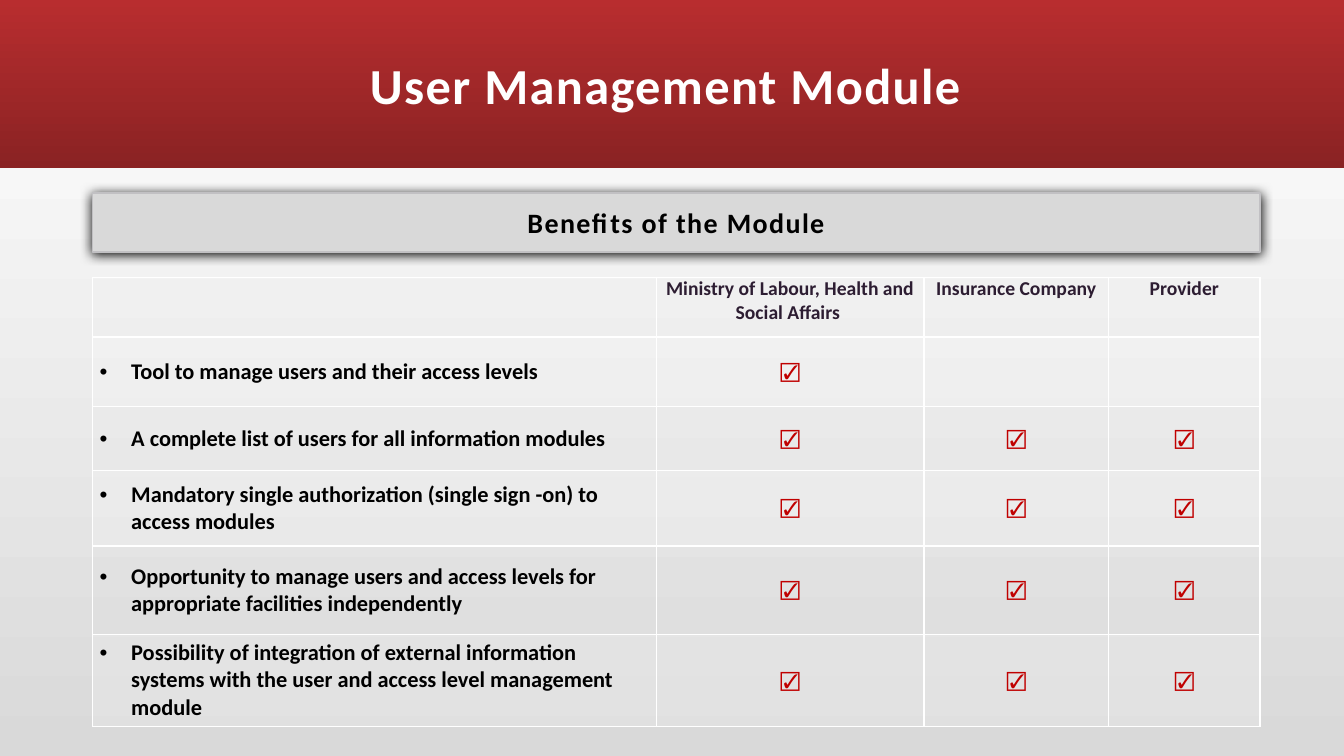
from dataclasses import dataclass

from lxml.etree import SubElement
from pptx import Presentation
from pptx.dml.color import RGBColor
from pptx.dml.fill import FillFormat
from pptx.enum.shapes import MSO_SHAPE
from pptx.enum.text import MSO_ANCHOR, PP_ALIGN
from pptx.oxml import parse_xml
from pptx.oxml.ns import nsdecls, qn
from pptx.shapes.autoshape import Shape
from pptx.slide import Slide
from pptx.table import Table, _Cell as Cell
from pptx.text.text import TextFrame, _Paragraph as Paragraph
from pptx.util import Emu, Pt

PX = 9525
WHITE = RGBColor(0xFF, 0xFF, 0xFF)
BLACK = RGBColor(0x00, 0x00, 0x00)
GREY = RGBColor(0xD9, 0xD9, 0xD9)
OUTLINE = RGBColor(0xC1, 0xC0, 0xC3)
RED = RGBColor(0xB8, 0x2D, 0x2F)
DARK_RED = RGBColor(0x8A, 0x22, 0x23)
PLUM = RGBColor(0x2D, 0x1D, 0x32)
TICK_RED = RGBColor(0xC0, 0x00, 0x00)

LEFT, WIDTH = 88, 1112
COLUMN_WIDTHS = [537, 255, 176, 144]
HEADER_HEIGHT = 57
SIDE_INSET, BULLET_INDENT = 7, 30


@dataclass(frozen=True)
class TextStyle:
    size: int
    color: RGBColor
    font: str = "Calibri"
    bold: bool = True
    align: PP_ALIGN = PP_ALIGN.CENTER
    spacing: int = 0


@dataclass(frozen=True)
class Benefit:
    text: str
    height: int
    ticks: int = 3


TITLE = TextStyle(36, WHITE, spacing=100)
SUBTITLE = TextStyle(20, BLACK, spacing=100)
HEADER = TextStyle(14, PLUM)
BENEFIT = TextStyle(16, BLACK, align=PP_ALIGN.LEFT)
TICK = TextStyle(14, TICK_RED, font="Arial", bold=False, spacing=100)

USERS = ["Ministry of Labour, Health and Social Affairs ", "Insurance Company", "Provider"]
BENEFITS = [
    Benefit("Tool to manage users and their access levels", 66, ticks=1),
    Benefit("A complete list of users for all information modules", 61),
    Benefit("Mandatory single authorization (single sign -on) to access modules", 72),
    Benefit("Opportunity to manage users and access levels for "
            "appropriate facilities independently", 84),
    Benefit("Possibility of integration of external information systems "
            "with the user and access level management module", 88),
]


def px(length: int) -> Emu:
    return Emu(length * PX)


def write(frame: TextFrame, text: str, style: TextStyle) -> Paragraph:
    paragraph = frame.paragraphs[0]
    run = paragraph.add_run()
    run.text = text
    paragraph.alignment = style.align
    font = paragraph.font
    font.name, font.size, font.bold = style.font, Pt(style.size), style.bold
    font.color.rgb = style.color
    if style.spacing:
        run.font._element.set("spc", str(style.spacing))
    return paragraph


def fill_gradient(fill: FillFormat, angle: int, start: RGBColor, end: RGBColor) -> None:
    fill.gradient()
    fill.gradient_angle = angle
    for stop, color in zip(fill.gradient_stops, (start, end)):
        stop.color.rgb = color


def add_rectangle(slide: Slide, left: int, top: int, width: int, height: int) -> Shape:
    shape = slide.shapes.add_shape(
        MSO_SHAPE.RECTANGLE, px(left), px(top), px(width), px(height))
    shape.shadow.inherit = False
    return shape


def add_title(slide: Slide) -> None:
    title = slide.shapes.title
    title.left, title.top, title.width, title.height = px(112), px(0), px(1056), px(160)
    title.text_frame.vertical_anchor = MSO_ANCHOR.MIDDLE
    write(title.text_frame, "User Management Module ", TITLE)
    band = add_rectangle(slide, 0, 0, 1280, 160)
    fill_gradient(band.fill, 270, RED, DARK_RED)
    band.line.fill.background()
    title.element.addprevious(band.element)


def add_subtitle(slide: Slide) -> None:
    bar = add_rectangle(slide, LEFT, 184, WIDTH, 56)
    bar.fill.solid()
    bar.fill.fore_color.rgb = GREY
    bar.line.color.rgb = OUTLINE
    bar.line.width = Pt(1)
    bar.text_frame.vertical_anchor = MSO_ANCHOR.MIDDLE
    write(bar.text_frame, "Benefits of the Module", SUBTITLE)
    effects = bar.element.spPr.find(qn("a:effectLst"))
    shadow = SubElement(effects, qn("a:outerShdw"), blurRad=str(Pt(8.5)),
                        dist=str(Pt(1)), dir="5400000", algn="ctr", rotWithShape="0")
    SubElement(shadow, qn("a:srgbClr"), val=str(BLACK))


def format_cell(cell: Cell, row: int) -> None:
    cell.margin_left = cell.margin_right = px(SIDE_INSET)
    cell.margin_top = cell.margin_bottom = 0
    cell.vertical_anchor = MSO_ANCHOR.MIDDLE if row else MSO_ANCHOR.TOP
    properties = cell._tc.get_or_add_tcPr()
    if row % 2:
        cell.fill.solid()
        cell.fill.fore_color.rgb = WHITE
        color = properties.find(qn("a:solidFill")).find(qn("a:srgbClr"))
        SubElement(color, qn("a:alpha"), val="20000")
    else:
        cell.fill.background()
    widths = {"lnL": 1, "lnR": 1, "lnT": 2 if row == 1 else 1, "lnB": 1 if row else 2}
    for index, (side, width) in enumerate(widths.items()):
        properties.insert(index, parse_xml(
            f'<a:{side} {nsdecls("a")} w="{Pt(width)}"><a:solidFill>'
            f'<a:srgbClr val="{WHITE}"/></a:solidFill></a:{side}>'))


def write_benefit(cell: Cell, text: str) -> None:
    paragraph = write(cell.text_frame, text, BENEFIT)
    paragraph.space_before = Pt(12)
    properties = paragraph._p.get_or_add_pPr()
    properties.set("marL", str(px(BULLET_INDENT)))
    properties.set("indent", str(px(-BULLET_INDENT)))
    bullet_font = parse_xml(f'<a:buFont {nsdecls("a")} typeface="Arial"/>')
    bullet = parse_xml(f'<a:buChar {nsdecls("a")} char="•"/>')
    properties.find(qn("a:spcBef")).addnext(bullet_font)
    bullet_font.addnext(bullet)


def fill_table(table: Table) -> None:
    for column, user in enumerate(USERS, start=1):
        write(table.cell(0, column).text_frame, user, HEADER)
    for row, benefit in enumerate(BENEFITS, start=1):
        write_benefit(table.cell(row, 0), benefit.text)
        for column in range(1, benefit.ticks + 1):
            write(table.cell(row, column).text_frame, "☑", TICK)


def add_benefits_table(slide: Slide) -> None:
    heights = [HEADER_HEIGHT] + [benefit.height for benefit in BENEFITS]
    table = slide.shapes.add_table(
        len(heights), len(COLUMN_WIDTHS),
        px(LEFT), px(264), px(WIDTH), px(sum(heights))).table
    table.first_row = table.horz_banding = False
    for column, width in zip(table.columns, COLUMN_WIDTHS):
        column.width = px(width)
    for index, (row, height) in enumerate(zip(table.rows, heights)):
        row.height = px(height)
        for cell in row.cells:
            format_cell(cell, index)
    fill_table(table)


def main() -> None:
    presentation = Presentation()
    presentation.slide_width, presentation.slide_height = px(1280), px(720)
    slide = presentation.slides.add_slide(presentation.slide_layouts[5])
    fill_gradient(slide.background.fill, 90, GREY, WHITE)
    add_title(slide)
    add_subtitle(slide)
    add_benefits_table(slide)
    presentation.save("out.pptx")


if __name__ == "__main__":
    main()
